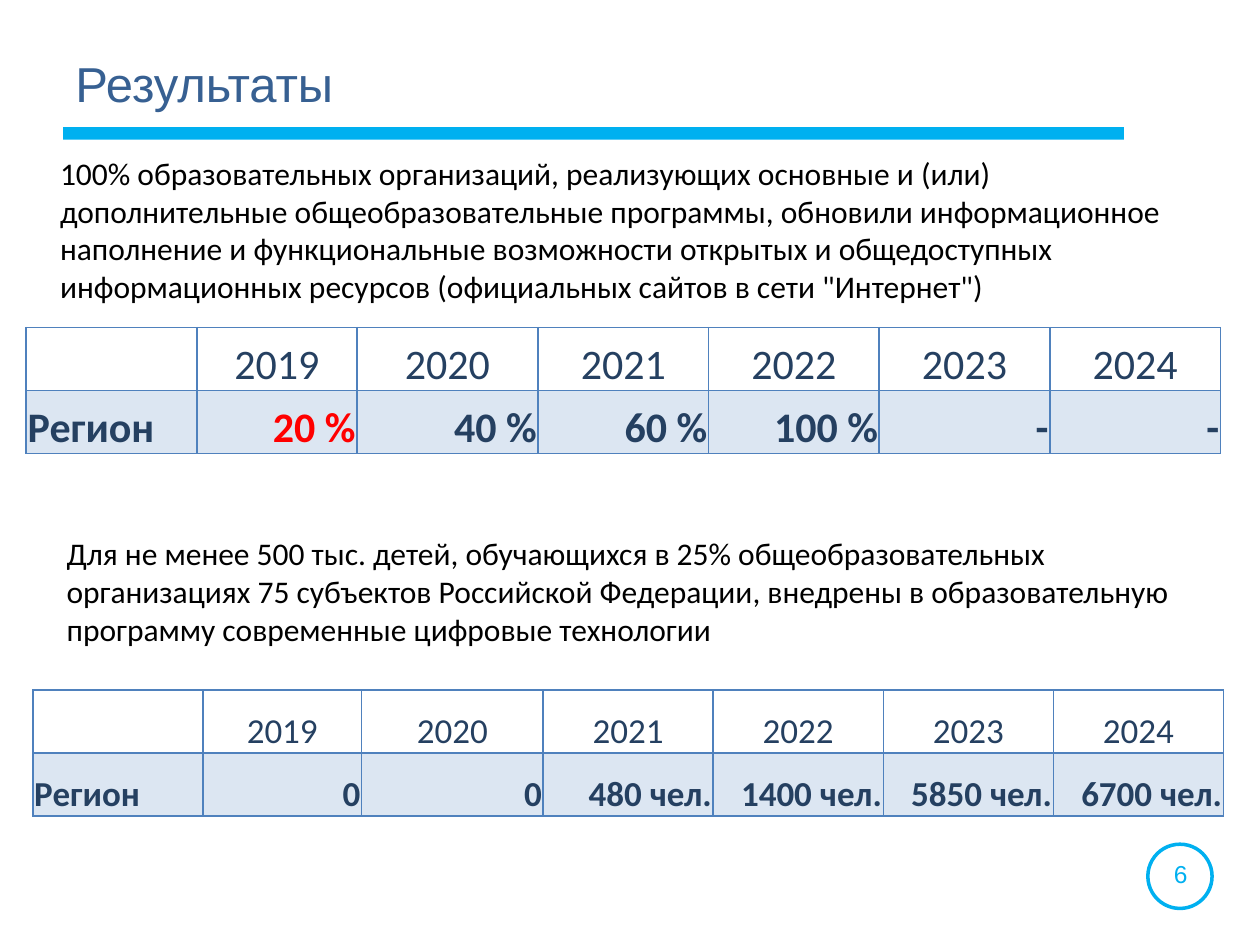
from dataclasses import dataclass
from typing import Any

from lxml import etree
from pptx import Presentation
from pptx.dml.color import RGBColor
from pptx.enum.shapes import MSO_SHAPE
from pptx.enum.text import MSO_ANCHOR, PP_ALIGN
from pptx.oxml.ns import qn
from pptx.util import Pt

RECTANGLE, ELLIPSE = MSO_SHAPE.RECTANGLE, MSO_SHAPE.OVAL
LEFT, CENTER, RIGHT = PP_ALIGN.LEFT, PP_ALIGN.CENTER, PP_ALIGN.RIGHT
TOP, MIDDLE, BOTTOM = MSO_ANCHOR.TOP, MSO_ANCHOR.MIDDLE, MSO_ANCHOR.BOTTOM
BORDER_TAGS = ("a:lnL", "a:lnR", "a:lnT", "a:lnB")


@dataclass(frozen=True)
class Theme:
    heading_font: str = "Arial"
    body_font: str = "Calibri"
    accent: str = "00B0F0"
    heading: str = "376092"
    body: str = "000000"
    table_text: str = "254061"
    highlight: str = "FF0000"
    border: str = "4F81BD"
    region_fill: str = "DCE6F2"
    heading_size: float = 28
    body_size: float = 18
    number_size: float = 14
    coverage_size: float = 24
    pupils_size: float = 20


@dataclass(frozen=True)
class Box:
    left: float
    top: float
    width: float
    height: float

    def lengths(self) -> tuple[Pt, ...]:
        return tuple(Pt(v) for v in (self.left, self.top, self.width, self.height))


@dataclass(frozen=True)
class TextStyle:
    font: str
    size: float
    color: str
    bold: bool = False
    align: Any = LEFT


@dataclass(frozen=True)
class Label:
    box: Box
    text: str
    style: TextStyle
    anchor: Any = TOP


@dataclass(frozen=True)
class Indicator:
    left: float
    top: float
    widths: tuple[float, ...]
    values: tuple[str, ...]
    size: float
    highlighted: tuple[str, ...] = ()


THEME = Theme()
ROW_HEIGHT = 36
YEARS = ("", "2019", "2020", "2021", "2022", "2023", "2024")
BODY = TextStyle(THEME.body_font, THEME.body_size, THEME.body)

LABELS = (
    Label(Box(654, 487.4, 41.5, 24.3), "6",
          TextStyle(THEME.heading_font, THEME.number_size, THEME.accent, align=CENTER)),
    Label(Box(36, 21.6, 601.2, 51.1), "Результаты",
          TextStyle(THEME.heading_font, THEME.heading_size, THEME.heading), MIDDLE),
    Label(Box(27.2, 84.4, 656.6, 94.5),
          "100% образовательных организаций, реализующих основные и (или) "
          "дополнительные общеобразовательные программы, обновили информационное "
          "наполнение и функциональные возможности открытых и общедоступных "
          'информационных ресурсов (официальных сайтов в сети "Интернет")', BODY),
    Label(Box(31, 301.7, 665.3, 72.7),
          "Для не менее 500 тыс. детей, обучающихся в 25% общеобразовательных "
          "организациях 75 субъектов Российской Федерации, внедрены в образовательную "
          "программу современные цифровые технологии", BODY),
)

INDICATORS = (
    Indicator(15, 187.2, (97.5, 91.5, 103.5) + (97.5,) * 4,
              ("Регион", "20 %", "40 %", "60 %", "100 %", "-", "-"),
              THEME.coverage_size, ("20 %",)),
    Indicator(18.8, 394.2, (97.2, 90.7, 103.7) + (97.2,) * 4,
              ("Регион", "0", "0", "480 чел.", "1400 чел.", "5850 чел.", "6700 чел."),
              THEME.pupils_size),
)


def apply_format(target: Any, values: dict[str, Any]) -> None:
    for attribute, value in values.items():
        setattr(target, attribute, value)


def write_text(frame: Any, text: str, style: TextStyle) -> None:
    paragraph = frame.paragraphs[0]
    paragraph.alignment = style.align
    run = paragraph.add_run()
    run.text = text
    apply_format(run.font, {"name": style.font, "size": Pt(style.size), "bold": style.bold})
    run.font.color.rgb = RGBColor.from_string(style.color)


def draw_label(slide: Any, label: Label) -> None:
    frame = slide.shapes.add_textbox(*label.box.lengths()).text_frame
    apply_format(frame, {"word_wrap": True, "vertical_anchor": label.anchor})
    write_text(frame, label.text, label.style)


def draw_title_rule(slide: Any) -> None:
    rule = slide.shapes.add_shape(RECTANGLE, *Box(36, 72.7, 606.2, 7.2).lengths())
    rule.shadow.inherit = False
    rule.fill.solid()
    rule.fill.fore_color.rgb = RGBColor.from_string(THEME.accent)
    rule.line.fill.background()


def draw_number_ring(slide: Any) -> None:
    ring = slide.shapes.add_shape(ELLIPSE, *Box(655.9, 482.4, 36.7, 36.7).lengths())
    ring.shadow.inherit = False
    ring.fill.background()
    ring.line.color.rgb = RGBColor.from_string(THEME.accent)
    ring.line.width = Pt(2)


def add_borders(cell: Any) -> None:
    properties = cell._tc.get_or_add_tcPr()
    for tag in BORDER_TAGS:
        edge = etree.SubElement(properties, qn(tag), w=str(Pt(1)))
        fill = etree.SubElement(edge, qn("a:solidFill"))
        etree.SubElement(fill, qn("a:srgbClr"), val=THEME.border)


def fill_cell(cell: Any, text: str, style: TextStyle, background: str | None) -> None:
    apply_format(cell, {
        "margin_left": Pt(0.75), "margin_right": Pt(0.75),
        "margin_top": Pt(0.75), "margin_bottom": Pt(0), "vertical_anchor": BOTTOM,
    })
    add_borders(cell)
    if background:
        cell.fill.solid()
        cell.fill.fore_color.rgb = RGBColor.from_string(background)
    else:
        cell.fill.background()
    if text:
        write_text(cell.text_frame, text, style)


def draw_indicator(slide: Any, indicator: Indicator) -> None:
    box = Box(indicator.left, indicator.top, sum(indicator.widths), 2 * ROW_HEIGHT)
    table = slide.shapes.add_table(2, len(YEARS), *box.lengths()).table
    apply_format(table, {"first_row": False, "horz_banding": False})
    for row in table.rows:
        row.height = Pt(ROW_HEIGHT)
    year_style = TextStyle(THEME.body_font, indicator.size, THEME.table_text, align=CENTER)
    for column, (width, year, value) in enumerate(
            zip(indicator.widths, YEARS, indicator.values)):
        table.columns[column].width = Pt(width)
        color = THEME.highlight if value in indicator.highlighted else THEME.table_text
        value_style = TextStyle(THEME.body_font, indicator.size, color, True,
                                RIGHT if column else LEFT)
        fill_cell(table.cell(0, column), year, year_style, None)
        fill_cell(table.cell(1, column), value, value_style, THEME.region_fill)


def main() -> None:
    presentation = Presentation()
    apply_format(presentation, {"slide_width": Pt(720), "slide_height": Pt(540)})
    slide = presentation.slides.add_slide(presentation.slide_layouts[6])
    draw_title_rule(slide)
    draw_number_ring(slide)
    for label in LABELS:
        draw_label(slide, label)
    for indicator in INDICATORS:
        draw_indicator(slide, indicator)
    presentation.save("out.pptx")


if __name__ == "__main__":
    main()
